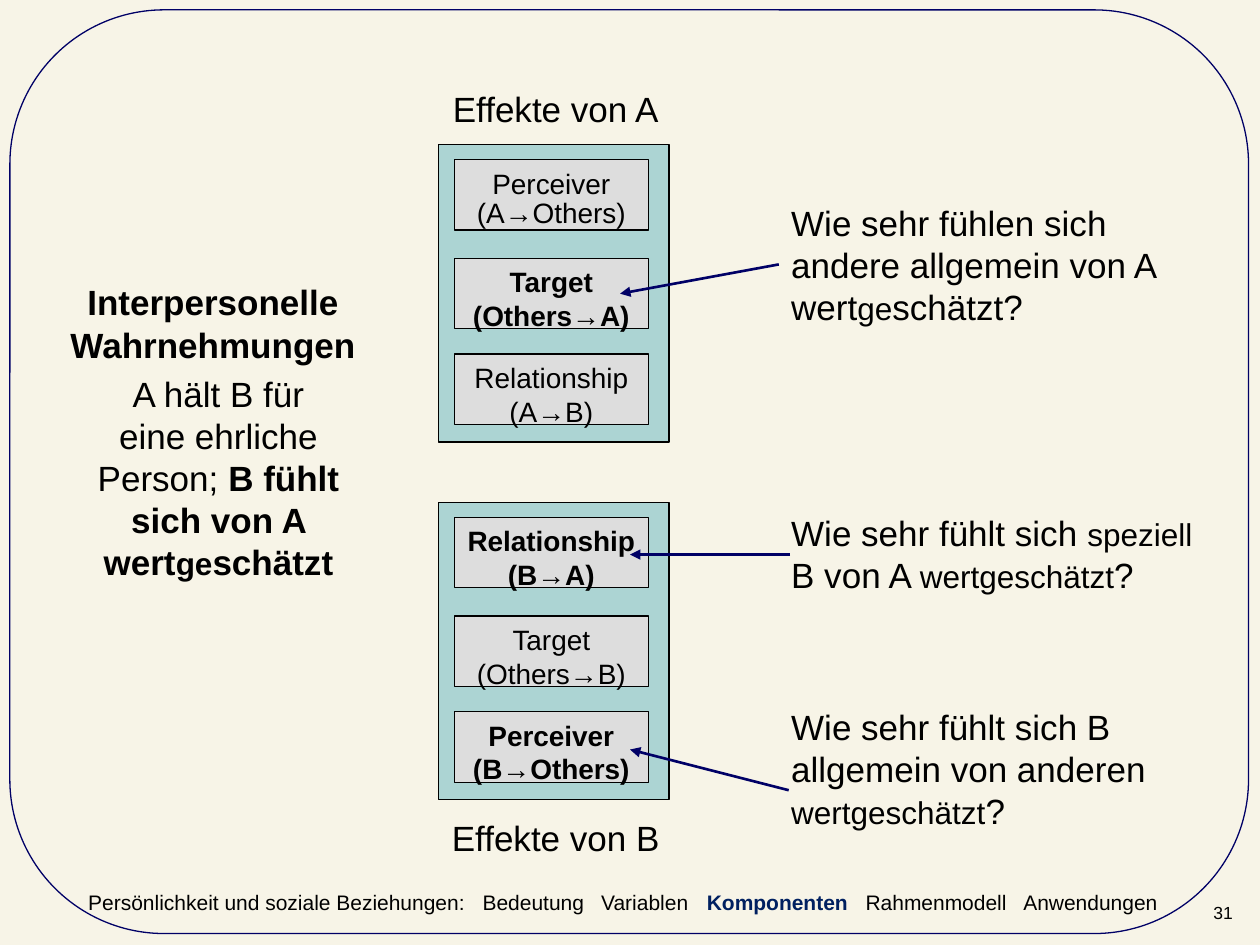
from lxml import etree
from pptx import Presentation
from pptx import util as u
from pptx.dml.color import RGBColor
from pptx.enum import shapes, text
from pptx.oxml.ns import qn

CREAM = RGBColor(0xF7, 0xF4, 0xE7)
NAVY = RGBColor(0x00, 0x00, 0x66)
HIGHLIGHT = RGBColor(0x00, 0x20, 0x60)
TEAL = RGBColor(0xAC, 0xD4, 0xD3)
GREY = RGBColor(0xDD, 0xDD, 0xDD)
BLACK = RGBColor(0, 0, 0)

PANEL_LEFT, PANEL_WIDTH, PANEL_HEIGHT = 8.84, 4.65, 5.99
BOX_LEFT, BOX_WIDTH, BOX_HEIGHT = 9.16, 3.91, 1.42
BOX_OFFSETS = (0.3, 2.29, 4.22)

PANELS = [
    (2.92, [
        (["Perceiver", "(A→Others)"], False),
        (["Target", "(Others→A)"], True),
        (["Relationship (A→B)"], False),
    ]),
    (10.13, [
        (["Relationship (B→A)"], True),
        (["Target", "(Others→B)"], False),
        (["Perceiver", "(B→Others)"], True),
    ]),
]

CENTERED_TEXTS = [
    ((8.31, 1.63, 5.79, 1.09), [("Effekte von A", 20, False)]),
    ((8.31, 16.33, 5.79, 1.09), [("Effekte von B", 20, False)]),
    ((0.89, 5.54, 6.81, 1.96), [("Interpersonelle Wahrnehmungen", 20, True)]),
    ((1.7, 7.39, 5.41, 4.5), [
        ("A hält B für eine ehrliche Person; ", 20, False),
        ("B fühlt sich von A wert", 20, True),
        ("ge", 18, True),
        ("schätzt", 20, True),
    ]),
]

QUESTIONS = [
    ((15.7, 3.94, 8.61, 2.79), [
        ("Wie sehr fühlen sich andere allgemein von A wert", 20, False),
        ("ge", 18, False),
        ("schätzt?", 20, False),
    ]),
    ((15.7, 10.19, 8.81, 1.96), [
        ("Wie sehr fühlt sich ", 20, False),
        ("speziell ", 18, False),
        ("B von A ", 20, False),
        ("wertgeschätzt", 18, False),
        ("?", 20, False),
    ]),
    ((15.7, 14.1, 8.61, 2.79), [
        ("Wie sehr fühlt sich B allgemein von anderen ", 20, False),
        ("wertgeschätzt", 18, False),
        ("?", 20, False),
    ]),
]

ARROWS = [
    (15.7, 5.33, 12.5, 5.92),
    (15.93, 11.18, 12.7, 11.18),
    (15.9, 15.93, 12.7, 15.11),
]

FOOTER_TOPIC = "Persönlichkeit und soziale Beziehungen:"
FOOTER_SECTIONS = [
    ("Bedeutung", 7.95),
    ("Variablen", 10.34),
    ("Komponenten", 12.47),
    ("Rahmenmodell", 15.67),
    ("Anwendungen", 18.85),
]
CURRENT_SECTION = "Komponenten"
SLIDE_NUMBER = "31"


def lengths(values):
    return [u.Cm(value) for value in values]


def add_run(paragraph, wording, size, bold=False, color=BLACK):
    run = paragraph.add_run()
    run.text = wording
    run.font.name = "Arial"
    run.font.size = u.Pt(size)
    run.font.bold = bold
    run.font.color.rgb = color


def add_block(slide, kind, place, line, fill=None):
    shape = slide.shapes.add_shape(kind, *lengths(place))
    shape.shadow.inherit = False
    if fill is None:
        shape.fill.background()
    else:
        shape.fill.solid()
        shape.fill.fore_color.rgb = fill
    shape.line.color.rgb = line
    shape.line.width = u.Pt(0.75)
    return shape


def set_margins(frame, horizontal, vertical):
    frame.margin_left = frame.margin_right = u.Cm(horizontal)
    frame.margin_top = frame.margin_bottom = u.Cm(vertical)


def add_text(slide, place, runs=(), alignment=text.PP_ALIGN.LEFT):
    frame = slide.shapes.add_textbox(*lengths(place)).text_frame
    frame.word_wrap = True
    paragraph = frame.paragraphs[0]
    paragraph.alignment = alignment
    for wording, size, bold in runs:
        add_run(paragraph, wording, size, bold)
    return frame


def add_panel(slide, top, effects):
    rectangle = shapes.MSO_SHAPE.RECTANGLE
    add_block(slide, rectangle, (PANEL_LEFT, top, PANEL_WIDTH, PANEL_HEIGHT), BLACK, TEAL)
    for offset, (lines, bold) in zip(BOX_OFFSETS, effects):
        place = (BOX_LEFT, top + offset, BOX_WIDTH, BOX_HEIGHT)
        frame = add_block(slide, rectangle, place, BLACK, GREY).text_frame
        frame.word_wrap = True
        frame.vertical_anchor = text.MSO_ANCHOR.TOP
        set_margins(frame, 0, 0.13)
        for index, line in enumerate(lines):
            paragraph = frame.add_paragraph() if index else frame.paragraphs[0]
            paragraph.alignment = text.PP_ALIGN.CENTER
            if line == "(A→Others)":
                paragraph.line_spacing = 0.9
            add_run(paragraph, line, 16, bold)


def add_arrow(slide, ends):
    arrow = slide.shapes.add_connector(shapes.MSO_CONNECTOR.STRAIGHT, *lengths(ends))
    arrow.line.color.rgb = NAVY
    arrow.line.width = u.Pt(1.5)
    etree.SubElement(arrow.line._get_or_add_ln(), qn("a:tailEnd"), type="triangle")
    etree.SubElement(arrow._element.spPr, qn("a:effectLst"))


def add_footer(slide):
    frame = add_text(slide, (1.75, 17.91, 22.23, 0.56))
    set_margins(frame, 0.03, 0.03)
    paragraph = frame.paragraphs[0]
    tab_list = etree.SubElement(paragraph._p.get_or_add_pPr(), qn("a:tabLst"))
    add_run(paragraph, FOOTER_TOPIC, 12)
    for section, position in FOOTER_SECTIONS:
        etree.SubElement(tab_list, qn("a:tab"), pos=str(u.Cm(position)), algn="l")
        current = section == CURRENT_SECTION
        add_run(paragraph, "\t" + section, 12, current, HIGHLIGHT if current else BLACK)


def main():
    presentation = Presentation()
    presentation.slide_width, presentation.slide_height = lengths((25.4, 19.05))
    slide = presentation.slides.add_slide(presentation.slide_layouts[6])
    slide.background.fill.solid()
    slide.background.fill.fore_color.rgb = CREAM

    border = add_block(slide, shapes.MSO_SHAPE.ROUNDED_RECTANGLE, (0.2, 0.2, 24.97, 18.62), NAVY)
    border.adjustments[0] = 0.167
    number = add_text(slide, (24.43, 18.16, 0.97, 0.48), [(SLIDE_NUMBER, 10, False)])
    set_margins(number, 0.03, 0.03)
    number.vertical_anchor = text.MSO_ANCHOR.BOTTOM

    for top, effects in PANELS:
        add_panel(slide, top, effects)
    for place, runs in CENTERED_TEXTS:
        add_text(slide, place, runs, text.PP_ALIGN.CENTER)
    for place, runs in QUESTIONS:
        add_text(slide, place, runs)
    for ends in ARROWS:
        add_arrow(slide, ends)
    add_footer(slide)
    presentation.save("out.pptx")


if __name__ == "__main__":
    main()
